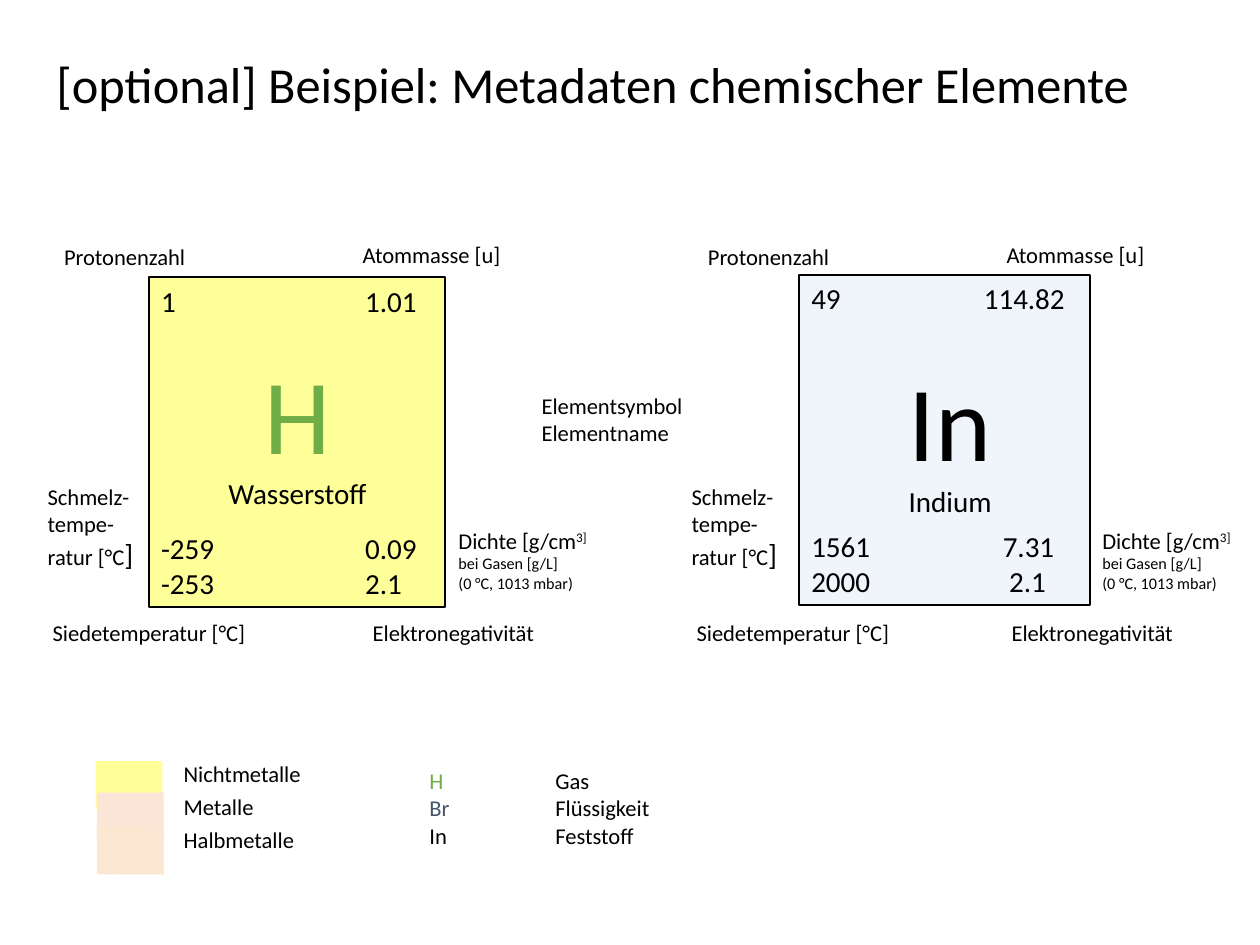
from lxml import etree
from pptx import Presentation
from pptx import util as u
from pptx.dml.color import RGBColor
from pptx.enum import dml, shapes, text
from pptx.oxml.ns import qn

BLACK = RGBColor(0x00, 0x00, 0x00)
GREEN = RGBColor(0x70, 0xAD, 0x47)
SLATE = RGBColor(0x44, 0x54, 0x6A)
YELLOW = RGBColor(0xFF, 0xFF, 0x99)
PALE = RGBColor(0xEF, 0xF5, 0xFB)
PEACH = RGBColor(0xFB, 0xE5, 0xD6)
SMALL, LABEL, VALUE, SYMBOL, TITLE = 9.2, 12.9, 16.6, 60.9, 28.8

deck = Presentation()
deck.slide_width, deck.slide_height = u.Inches(10), u.Inches(7.5)
slide = deck.slides.add_slide(deck.slide_layouts[6])


def block(left, top, wide, high, fill=None, edge=None):
    box = [u.Inches(n) for n in (left, top, wide, high)]
    if fill is None:
        shape = slide.shapes.add_textbox(*box)
    else:
        shape = slide.shapes.add_shape(shapes.MSO_SHAPE.RECTANGLE, *box)
        shape.shadow.inherit = False
        shape.fill.solid()
        shape.fill.fore_color.rgb = fill
        if edge is None:
            shape.line.fill.background()
        else:
            shape.line.color.rgb = edge
            shape.line.width = u.Pt(1)
    shape.text_frame.word_wrap = fill is not None
    shape.text_frame.vertical_anchor = text.MSO_ANCHOR.TOP
    return shape


def write(shape, rows, size=LABEL, color=BLACK, gap=0, tab=None, align=text.PP_ALIGN.LEFT):
    frame = shape.text_frame
    for i, words in enumerate(rows):
        para = frame.add_paragraph() if i else frame.paragraphs[0]
        para.alignment = align
        if i and gap:
            para.space_before = u.Pt(gap)
        if tab:
            stops = etree.SubElement(para._p.get_or_add_pPr(), qn("a:tabLst"))
            etree.SubElement(stops, qn("a:tab"), pos=str(u.Inches(tab)), algn="l")
        para.font.name = "Calibri"
        para.font.size = u.Pt(size)
        para.font.color.rgb = color
        for word in words if isinstance(words, list) else [words]:
            para.add_run().text = word
    return frame.paragraphs


head = block(0.35, 0.4, 9.13, 0.59)
head.text_frame.word_wrap = True
head.text_frame.vertical_anchor = text.MSO_ANCHOR.MIDDLE
write(head, ["[optional] Beispiel: Metadaten chemischer Elemente"], TITLE)[0].line_spacing = 0.9

cards = [
    (6.34, 2.18, 2.31, PALE, [("49", "114.82", 1.37), ("1561", "7.31", 1.52), ("2000", "2.1", 1.57)],
     6.84, 2.77, "In", "Indium", BLACK),
    (1.18, 2.2, 2.35, YELLOW, [("1", "1.01", 1.62), ("-259", "0.09", 1.62), ("-253", "2.1", 1.62)],
     1.66, 2.71, "H", "Wasserstoff", GREEN),
]
for left, top, wide, fill, data, inset, drop, sign, name, color in cards:
    card = block(left, top, wide, 2.62, fill, BLACK)
    lines = write(card, [f"{low}\t{high}" for low, high, _ in data], VALUE)
    for line, (_, _, tab) in zip(lines, data):
        stops = etree.Element(qn("a:tabLst"))
        etree.SubElement(stops, qn("a:tab"), pos=str(u.Inches(tab)), algn="l")
        line._p.pPr.find(qn("a:defRPr")).addprevious(stops)
    lines[1].space_before = u.Pt(121.5)
    core = block(inset, drop, 1.4, 1.41, fill)
    lines = write(core, [sign, name], VALUE, align=text.PP_ALIGN.CENTER)
    lines[0].font.size = u.Pt(SYMBOL)
    lines[0].font.color.rgb = color

for shift in (0, 5.11):
    for left, top, wide, label in [
        (0.41, 1.88, 1.19, "Protonenzahl"),
        (2.78, 1.86, 1.32, "Atommasse [u]"),
        (0.32, 4.86, 1.77, "Siedetemperatur [°C]"),
        (2.86 if shift == 0 else 2.82, 4.86, 1.52, "Elektronegativität"),
    ]:
        write(block(left + shift, top, wide, 0.32), [label])
    dense = write(block(3.54 + shift, 4.13, 1.25, 0.63),
                  [["Dichte [g/cm", "3]"], "bei Gasen [g/L]", "(0 °C, 1013 mbar)"])
    dense[0].runs[1].font._element.set("baseline", "30000")
    for line in dense[1:]:
        line.font.size = u.Pt(SMALL)
    melt = write(block(0.28 + shift, 3.78, 0.91, 0.82), ["Schmelz-", "tempe-", ["ratur [°C", "]"]])
    melt[2].runs[1].font.size = u.Pt(VALUE)

write(block(4.2, 3.06, 1.34, 0.54), ["Elementsymbol", "Elementname"])

for left, top, fill in [(0.76, 6.04, YELLOW), (0.77, 6.29, PEACH), (0.77, 6.56, PEACH)]:
    patch = block(left, top, 0.53, 0.38, fill)
patch.fill.patterned()
patch.fill.pattern = dml.MSO_PATTERN.WIDE_UPWARD_DIAGONAL
patch.fill.fore_color.rgb = YELLOW
patch.fill.back_color.rgb = PEACH

write(block(1.36, 5.98, 1.15, 0.85), ["Nichtmetalle", "Metalle", "Halbmetalle"], gap=3.4)
states = write(block(3.31, 6.04, 1.97, 0.75),
               [["H", "\tGas"], ["Br", "\tFlüssigkeit"], "In\tFeststoff"], tab=1)
for line, color in zip(states, (GREEN, SLATE)):
    line.runs[0].font.color.rgb = color

deck.save("out.pptx")
